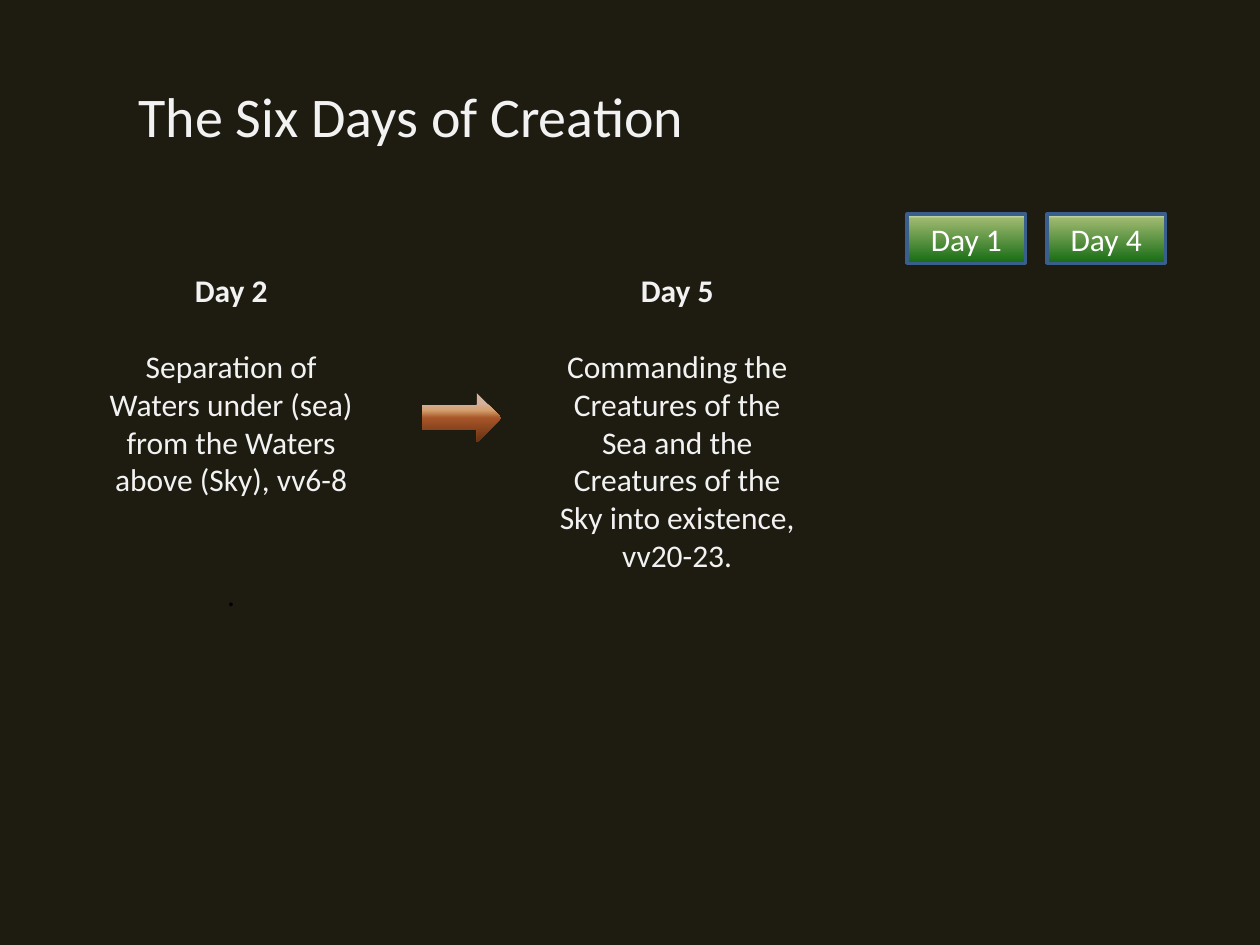
from lxml import etree
from pptx import Presentation
from pptx.dml.color import RGBColor
from pptx.enum.shapes import MSO_SHAPE
from pptx.enum.text import MSO_ANCHOR, PP_ALIGN
from pptx.oxml.ns import qn
from pptx.util import Inches, Pt

COLORS = {
    "background": "1E1C11",
    "text": "F2F2F2",
    "label": "FFFFFF",
    "dot": "000000",
    "border": "3A5F8C",
}
GREEN = [(0, "DDEBCF"), (9, "9CB86E"), (100, "156B13")]
COPPER = [(21, "D6B19C"), (35, "D49E6C"), (51, "A65528"), (100, "663012")]
LINE = 22


def rgb(name):
    return RGBColor.from_string(COLORS[name])


def write(paragraph, text, size=18, color="text", bold=False,
          align=PP_ALIGN.CENTER, before=0):
    paragraph.alignment = align
    paragraph.space_before = Pt(before)
    run = paragraph.add_run()
    run.text = text
    run.font.name = "Calibri"
    run.font.size = Pt(size)
    run.font.bold = bold
    run.font.color.rgb = rgb(color)


def fill_gradient(shape, stops):
    shape.fill.gradient()
    gradient = shape.fill._xPr.find(qn("a:gradFill"))
    for child in list(gradient):
        gradient.remove(child)
    stop_list = etree.SubElement(gradient, qn("a:gsLst"))
    for position, color in stops:
        stop = etree.SubElement(stop_list, qn("a:gs"), pos=str(position * 1000))
        etree.SubElement(stop, qn("a:srgbClr"), val=color)
    etree.SubElement(gradient, qn("a:lin"), ang="5400000", scaled="0")


def add_title(slide, left, top, width, height):
    title = slide.shapes.title
    title.left, title.top = Inches(left), Inches(top)
    title.width, title.height = Inches(width), Inches(height)
    frame = title.text_frame
    frame.margin_left = Inches(1.1)
    frame.vertical_anchor = MSO_ANCHOR.MIDDLE
    write(frame.paragraphs[0], "The Six Days of Creation", size=32,
          align=PP_ALIGN.LEFT)


def add_day_button(slide, day, left, top, width, height):
    button = slide.shapes.add_shape(
        MSO_SHAPE.RECTANGLE, Inches(left), Inches(top), Inches(width), Inches(height))
    button.shadow.inherit = False
    fill_gradient(button, GREEN)
    button.line.color.rgb = rgb("border")
    button.line.width = Pt(2)
    button.text_frame.vertical_anchor = MSO_ANCHOR.MIDDLE
    write(button.text_frame.paragraphs[0], day, color="label")


def add_day_column(slide, day, description, left, top, width, height):
    column = slide.shapes.add_textbox(
        Inches(left), Inches(top), Inches(width), Inches(height))
    frame = column.text_frame
    frame.word_wrap = True
    write(frame.paragraphs[0], day, bold=True)
    write(frame.add_paragraph(), description, before=LINE)
    return frame


def add_arrow(slide, left, top, width, height):
    arrow = slide.shapes.add_shape(
        MSO_SHAPE.RIGHT_ARROW, Inches(left), Inches(top), Inches(width), Inches(height))
    arrow.shadow.inherit = False
    fill_gradient(arrow, COPPER)
    arrow.line.fill.background()


def main():
    deck = Presentation()
    deck.slide_width, deck.slide_height = Inches(10), Inches(7.5)
    slide = deck.slides.add_slide(deck.slide_layouts[5])
    slide.background.fill.solid()
    slide.background.fill.fore_color.rgb = rgb("background")

    add_title(slide, 0, 0.52, 10, 0.79)
    for index, day in enumerate(["Day 1", "Day 4"]):
        add_day_button(slide, day, 7.2 + 1.11 * index, 1.7, 0.94, 0.39)

    separation = add_day_column(
        slide, "Day 2",
        "Separation of Waters under (sea) from the Waters above (Sky), vv6-8",
        0.75, 2.1, 2.17, 2.83)
    write(separation.add_paragraph(), ".", color="dot", before=2 * LINE)
    add_day_column(
        slide, "Day 5",
        "Commanding the Creatures of the Sea and the Creatures of the Sky "
        "into existence, vv20-23.",
        4.29, 2.1, 2.17, 2.83)
    add_arrow(slide, 3.35, 3.12, 0.63, 0.39)

    deck.save("out.pptx")


if __name__ == "__main__":
    main()
